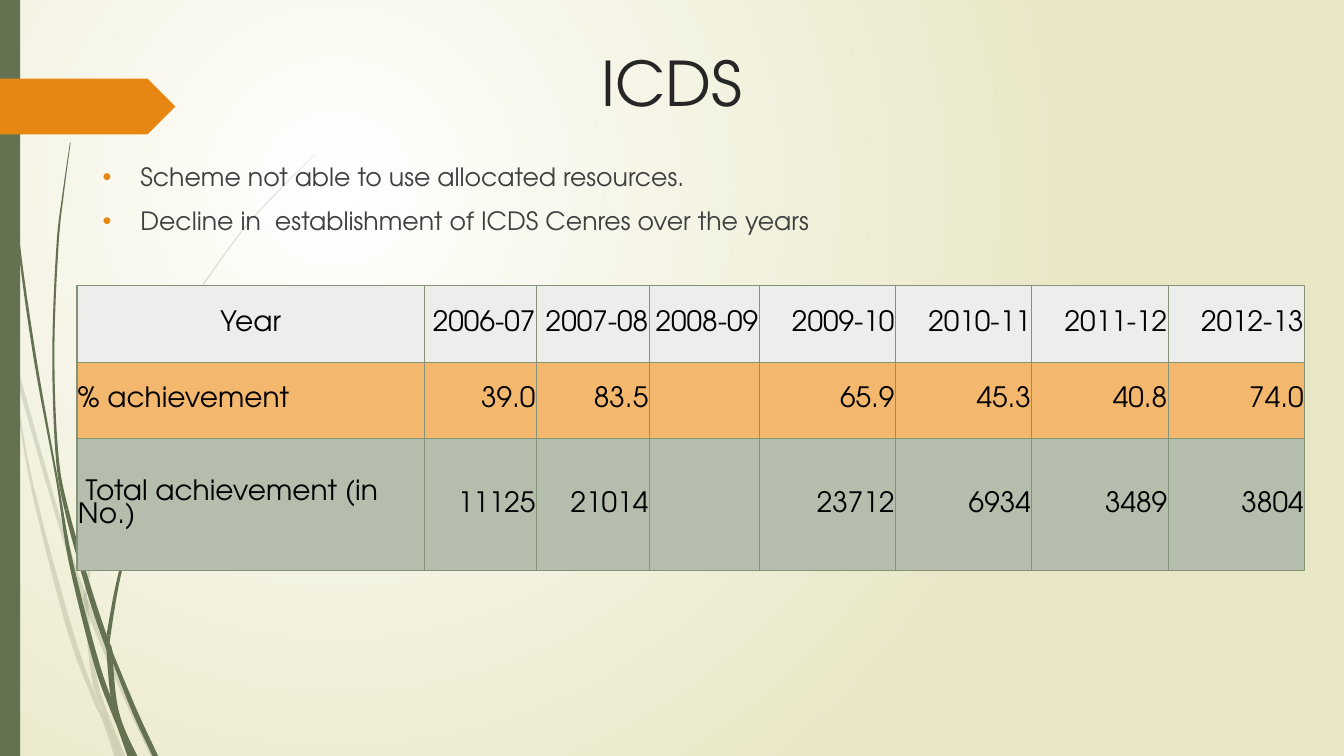
import pptx
import pptx.dml.color
import pptx.enum.dml
import pptx.enum.shapes
import pptx.enum.text
import pptx.oxml
import pptx.oxml.ns
import pptx.util

Pt = pptx.util.Pt
qn = pptx.oxml.ns.qn
Shape = pptx.enum.shapes.MSO_SHAPE
Align = pptx.enum.text.PP_ALIGN
Anchor = pptx.enum.text.MSO_ANCHOR
FONT = "TeX Gyre Adventor"
GREEN, ORANGE = "647252", "E78712"
NS = 'xmlns:a="http://schemas.openxmlformats.org/drawingml/2006/main"'


def color(code):
    return pptx.dml.color.RGBColor.from_string(code)


def write(para, text, size, code, **style):
    """Put text in a paragraph, with a format for its run and itself."""
    run = para.add_run()
    run.text = text
    for name, value in {"name": FONT, "size": Pt(size)}.items():
        setattr(run.font, name, value)
    run.font.color.rgb = color(code)
    for name, value in style.items():
        setattr(para, name, value)


deck = pptx.Presentation()
deck.slide_width, deck.slide_height = Pt(960), Pt(540)
slide = deck.slides.add_slide(deck.slide_layouts[5])
shapes = slide.shapes

# Background
back = slide.background.fill
back.gradient()
for stop, code in zip(back.gradient_stops, ("FFFFFF", "E8E6C4")):
    stop.color.rgb = color(code)
grad = slide.element.find(".//" + qn("a:gradFill"))
grad.replace(grad.find(qn("a:lin")), pptx.oxml.parse_xml(
    f'<a:path {NS} path="circle">'
    '<a:fillToRect l="50000" t="50000" r="100000" b="100000"/></a:path>'))

# Grass blades: joints, then left edge x, y and width at each knot
pale = [
    ([2, 5], [(0, 203, 0), (0, 215, 3), (7, 248, 2), (12, 271, 3),
              (42, 376, 3), (63, 439, 4), (89, 500, 4), (108, 541, 4)]),
    ([4], [(8, 252, 0), (20, 338, 2), (47, 447, 4), (66, 499, 3),
           (73, 514, 3), (82, 541, 4)]),
    ([5, 6, 9], [(225, 110, 0.5), (193, 142, 1), (164, 176, 1),
                 (114, 251, 1.5), (77, 332, 2), (61, 420, 2), (60, 431, 3),
                 (63, 465, 3), (67, 492, 4), (75, 512, 3), (86, 541, 4)]),
]
dark = [
    ([4, 8], [(2, 0, 1), (5, 79, 1), (12, 168, 1.5), (24, 256, 2),
              (40, 343, 1.5), (49, 401, 3), (67, 474, 4), (80, 510, 4),
              (84, 520, 4), (91, 540, 7)]),
    ([4, 5, 7], [(50, 102, 0.5), (44.6, 139, 1), (40.3, 176, 1.5),
                 (37.4, 251, 1.5), (39.6, 323, 2), (46, 364, 3),
                 (63, 426, 4), (76, 464, 4), (80, 472, 3), (95, 510, 4),
                 (109, 540, 4)]),
    ([5, 6, 8], [(187, 248, 0.5), (166, 269, 1), (147, 292, 1.5),
                 (112, 341, 2), (88, 397, 2), (76, 454, 3), (76, 464, 4),
                 (79, 498, 4), (84, 518, 4), (94, 540, 4)]),
]
STEPS = 6
for blades, alpha in ((pale, 20), (dark, 100)):
    for joints, knots in blades:
        ends = [knots[0], *knots, knots[-1]]
        curve = []
        for a, b, c, d in zip(ends, ends[1:], ends[2:], ends[3:]):
            for step in range(STEPS):
                t = step / STEPS
                curve.append([
                    q + t * (r - p) / 2
                    + t * t * (2 * p - 5 * q + 4 * r - s) / 2
                    + t ** 3 * (3 * q - p - 3 * r + s) / 2
                    for p, q, r, s in zip(a, b, c, d)])
        curve.append(knots[-1])
        for first, last in zip([0, *joints], [*joints, len(knots) - 1]):
            part = curve[first * STEPS:last * STEPS + 1]
            edge = [(Pt(x), Pt(y)) for x, y, w in part]
            edge += [(Pt(x + w), Pt(y)) for x, y, w in reversed(part)]
            form = shapes.build_freeform(*edge[0], scale=1.0)
            form.add_line_segments(edge[1:], close=True)
            blade = form.convert_to_shape()
            blade.shadow.inherit = False
            blade.line.fill.background()
            blade.fill.solid()
            blade.fill.fore_color.rgb = color(GREEN)
            if alpha < 100:
                tint = blade.element.spPr.find(".//" + qn("a:srgbClr"))
                tint.append(pptx.oxml.parse_xml(
                    f'<a:alpha {NS} val="{alpha * 1000}"/>'))

# Side bar and arrow
for kind, box, code in (
        (Shape.RECTANGLE, (0, 0, 14.4, 540), GREEN),
        (Shape.PENTAGON, (0, 56.2, 125.3, 39.8), ORANGE)):
    block = shapes.add_shape(kind, *map(Pt, box))
    block.shadow.inherit = False
    block.line.fill.background()
    block.fill.solid()
    block.fill.fore_color.rgb = color(code)

# Title and bullets
title = shapes.title
place = {"left": 66.2, "top": 28.8, "width": 828, "height": 52.6}
for name, value in place.items():
    setattr(title, name, Pt(value))
points = shapes.add_textbox(Pt(66.2), Pt(111.8), Pt(828), Pt(92.2))
for shape in (title, points):
    frame = {"word_wrap": True, "vertical_anchor": Anchor.TOP,
             "auto_size": pptx.enum.text.MSO_AUTO_SIZE.NONE}
    for name, value in frame.items():
        setattr(shape.text_frame, name, value)
write(title.text_frame.paragraphs[0], "ICDS", 44, "262626",
      alignment=Align.CENTER)

lines = ["Scheme not able to use allocated resources.",
         "Decline in  establishment of ICDS Cenres over the years"]
for i, line in enumerate(lines):
    body = points.text_frame
    para = body.add_paragraph() if i else body.paragraphs[0]
    write(para, line, 18, "404040", space_before=Pt(10))
    props = para._p.get_or_add_pPr()
    props.set("marL", str(Pt(27)))
    props.set("indent", str(-Pt(27)))
    for mark in (f'<a:buClr {NS}><a:srgbClr val="{ORANGE}"/></a:buClr>',
                 f'<a:buFont {NS} typeface="Arial"/>',
                 f'<a:buChar {NS} char="•"/>'):
        props.append(pptx.oxml.parse_xml(mark))

# Table
rows = [
    ["Year", "2006-07", "2007-08", "2008-09", "2009-10", "2010-11",
     "2011-12", "2012-13"],
    ["% achievement", "39.0", "83.5", "", "65.9", "45.3", "40.8", "74.0"],
    [" Total achievement (in No.)", "11125", "21014", "", "23712", "6934",
     "3489", "3804"],
]
fills = ["EDEEEC", "F4B76E", "B5BEAD"]
widths = [248.2, 80, 80.6, 78.5] + [97.4] * 4
heights = [54.7, 54.7, 94.3]
table = shapes.add_table(len(rows), len(widths), Pt(55), Pt(204),
                         Pt(sum(widths)), Pt(sum(heights))).table
table.first_row = table.horz_banding = False
for col, width in zip(table.columns, widths):
    col.width = Pt(width)
for r, texts in enumerate(rows):
    table.rows[r].height = Pt(heights[r])
    for c, text in enumerate(texts):
        cell = table.cell(r, c)
        format = {"margin_left": Pt(0.7), "margin_right": Pt(0.7),
                  "margin_top": Pt(0.7), "margin_bottom": 0,
                  "vertical_anchor": Anchor.MIDDLE}
        for name, value in format.items():
            setattr(cell, name, value)
        if text:
            side = Align.RIGHT if c else Align.LEFT if r else Align.CENTER
            write(cell.text_frame.paragraphs[0], text, 20, "000000",
                  alignment=side, line_spacing=0.9)
        props = cell._tc.get_or_add_tcPr()
        for edge in "LRTB":
            props.append(pptx.oxml.parse_xml(
                f'<a:ln{edge} {NS} w="12700"><a:solidFill>'
                f'<a:srgbClr val="849276"/></a:solidFill></a:ln{edge}>'))
        cell.fill.solid()
        cell.fill.fore_color.rgb = color(fills[r])

deck.save("out.pptx")
